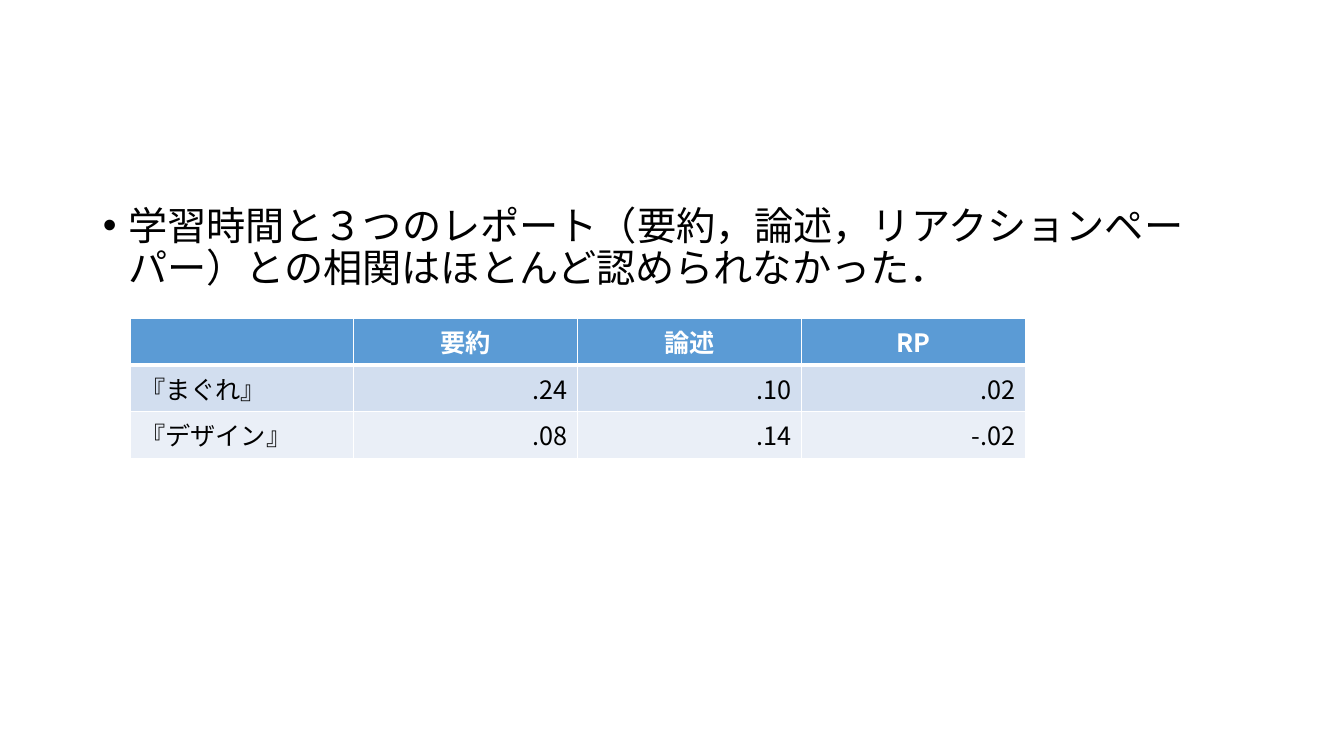
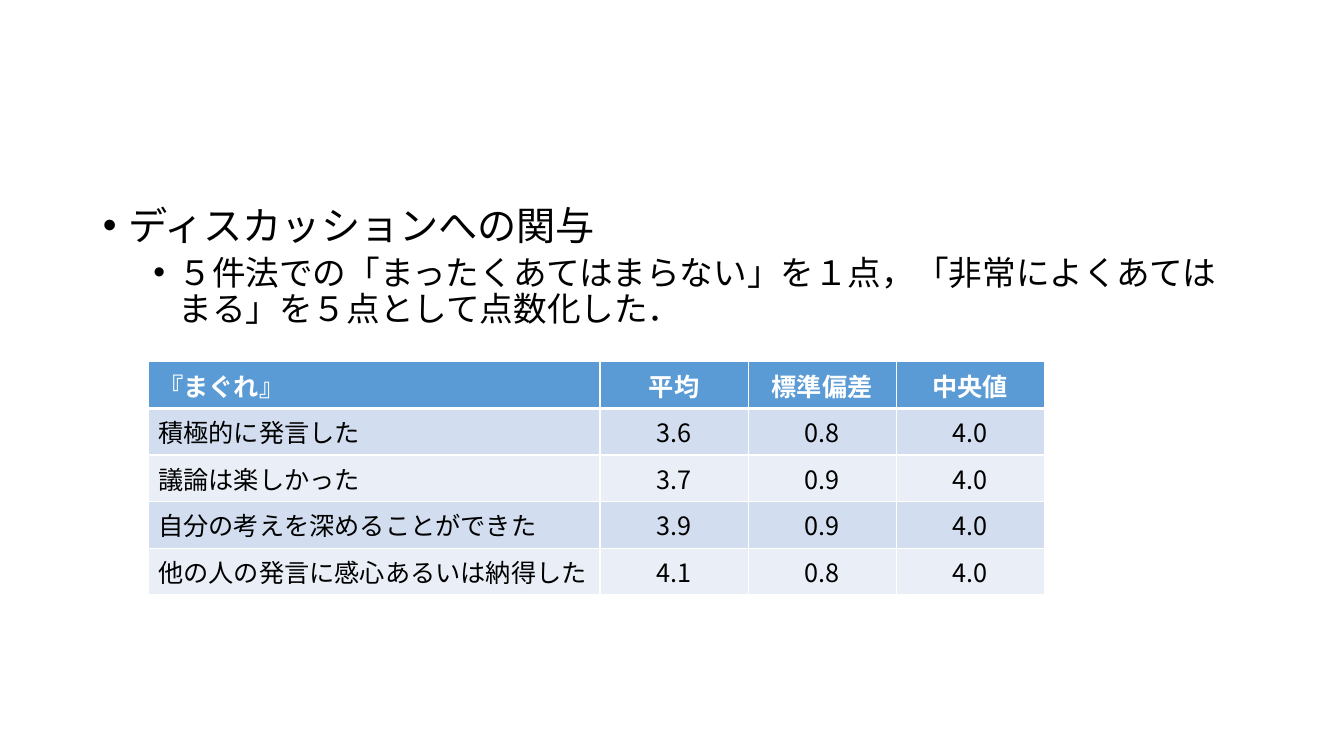
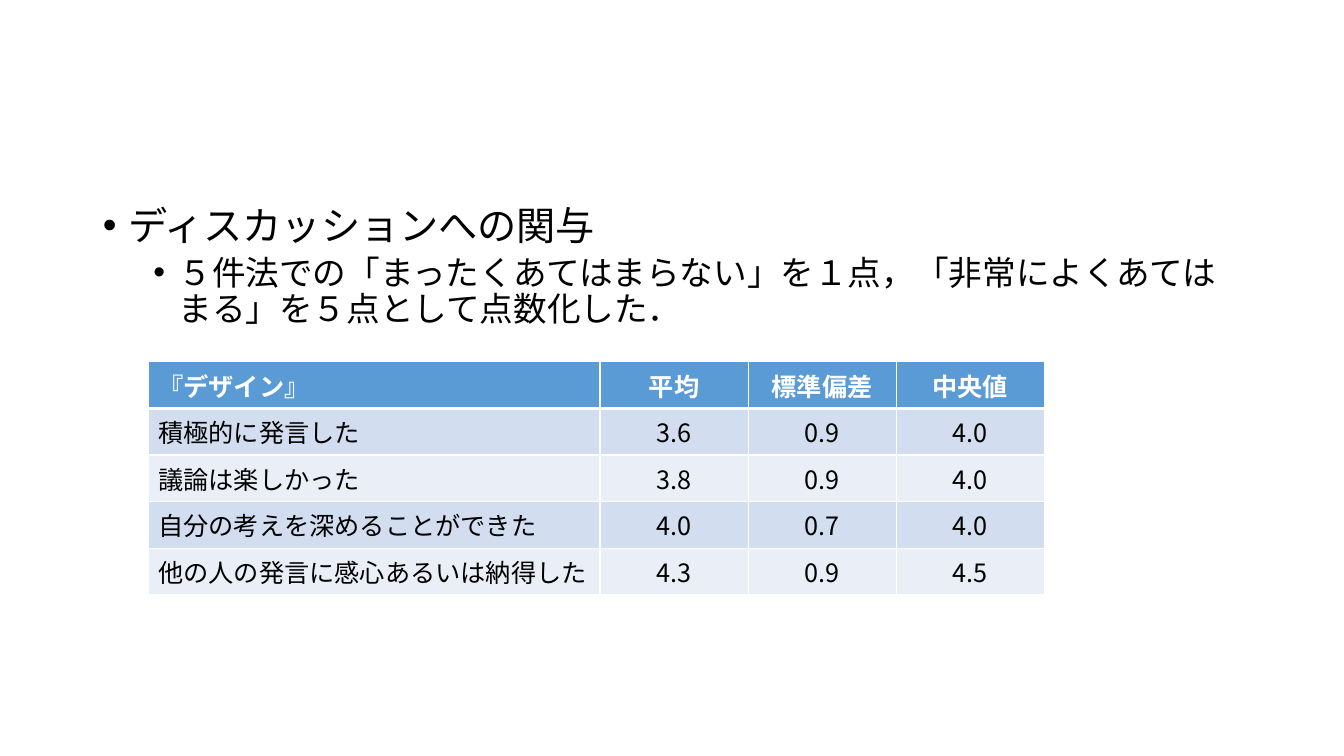
from dataclasses import dataclass

from lxml import etree
from pptx import Presentation
from pptx.dml.color import RGBColor
from pptx.enum.lang import MSO_LANGUAGE_ID
from pptx.enum.text import MSO_AUTO_SIZE, PP_ALIGN
from pptx.oxml.ns import qn
from pptx.util import Pt

LEFT, CENTER, RIGHT = PP_ALIGN.LEFT, PP_ALIGN.CENTER, PP_ALIGN.RIGHT
JAPANESE = MSO_LANGUAGE_ID.JAPANESE
NO_AUTOFIT = MSO_AUTO_SIZE.NONE
TITLE_AND_CONTENT = 1
EMU_PER_PX = 9144


@dataclass(frozen=True)
class Theme:
    font: str = "Noto Sans CJK JP"
    ink: str = "000000"
    paper: str = "FFFFFF"
    header: str = "5B9BD5"
    bands: tuple = ("D2DEEF", "EAEFF7")
    bullet_sizes: tuple = (28, 24)
    bullet_gaps: tuple = (10, 5)
    bullet_indents: tuple = (25, 75)
    hanging: int = 25
    table_size: int = 18
    rule: int = 1
    header_rule: int = 3


THEME = Theme()
SLIDE_SIZE = (1333, 750)
BODY_BOX = (92, 200, 1150, 476)
ROW_HEIGHT = 41

INVOLVEMENT = [
    ("ディスカッションへの関与", 0),
    ("５件法での「まったくあてはまらない」を１点，「非常によくあてはまる」を５点として点数化した．", 1),
]
QUESTIONS = ["積極的に発言した", "議論は楽しかった", "自分の考えを深めることができた",
             "他の人の発言に感心あるいは納得した"]
STATISTICS = ["平均", "標準偏差", "中央値"]


def px(length):
    return length * EMU_PER_PX


def write(paragraph, text, *, size, color=THEME.ink, bold=False, align=LEFT):
    paragraph.alignment = align
    if not text:
        return
    run = paragraph.add_run()
    run.text = text
    font = run.font
    font.size, font.bold, font.name = Pt(size), bold, THEME.font
    font.color.rgb = RGBColor.from_string(color)
    font.language_id = JAPANESE
    etree.SubElement(font._element, qn("a:ea"), typeface=THEME.font)


def add_bullet(paragraph, text, level):
    write(paragraph, text, size=THEME.bullet_sizes[level])
    paragraph.level = level
    paragraph.line_spacing = 0.9
    paragraph.space_before = Pt(THEME.bullet_gaps[level])
    properties = paragraph._p.get_or_add_pPr()
    properties.set("marL", str(px(THEME.bullet_indents[level])))
    properties.set("indent", str(-px(THEME.hanging)))
    etree.SubElement(properties, qn("a:buFont"), typeface="Arial")
    etree.SubElement(properties, qn("a:buChar"), char="•")


def fill_body(body, box, bullets):
    body.left, body.top, body.width, body.height = map(px, box)
    frame = body.text_frame
    frame.word_wrap, frame.auto_size = True, NO_AUTOFIT
    for index, (text, level) in enumerate(bullets):
        paragraph = frame.add_paragraph() if index else frame.paragraphs[0]
        add_bullet(paragraph, text, level)


def set_borders(cell, top, bottom):
    """Draw the four edges; they must precede the fill in the cell properties."""
    properties = cell._tc.get_or_add_tcPr()
    edges = {"lnL": THEME.rule, "lnR": THEME.rule, "lnT": top, "lnB": bottom}
    for position, (edge, width) in enumerate(edges.items()):
        line = etree.Element(qn(f"a:{edge}"), w=str(Pt(width)))
        solid = etree.SubElement(line, qn("a:solidFill"))
        etree.SubElement(solid, qn("a:srgbClr"), val=THEME.paper)
        properties.insert(position, line)


def format_cell(cell, text, row, column, number_align):
    is_header = row == 0
    label_align = CENTER if is_header else number_align
    write(cell.text_frame.paragraphs[0], text, size=THEME.table_size, bold=is_header,
          color=THEME.paper if is_header else THEME.ink,
          align=label_align if column else LEFT)
    cell.fill.solid()
    background = THEME.header if is_header else THEME.bands[(row - 1) % 2]
    cell.fill.fore_color.rgb = RGBColor.from_string(background)
    set_borders(cell, top=THEME.header_rule if row == 1 else THEME.rule,
                bottom=THEME.header_rule if is_header else THEME.rule)


def add_data_table(slide, left, top, widths, rows, number_align):
    box = (left, top, sum(widths), ROW_HEIGHT * len(rows))
    table = slide.shapes.add_table(len(rows), len(widths), *map(px, box)).table
    for column, width in zip(table.columns, widths):
        column.width = px(width)
    for r, texts in enumerate(rows):
        table.rows[r].height = px(ROW_HEIGHT)
        for c, text in enumerate(texts):
            format_cell(table.cell(r, c), text, r, c, number_align)


def add_content_slide(deck, bullets):
    slide = deck.slides.add_slide(deck.slide_layouts[TITLE_AND_CONTENT])
    title = slide.shapes.title._element
    title.getparent().remove(title)
    fill_body(slide.placeholders[1], BODY_BOX, bullets)
    return slide


def add_correlation_slide(deck):
    slide = add_content_slide(deck, [
        ("学習時間と３つのレポート（要約，論述，リアクションペーパー）との相関はほとんど認められなかった．", 0)])
    rows = [["", "要約", "論述", "RP"],
            ["『まぐれ』", ".24", ".10", ".02"],
            ["『デザイン』", ".08", ".14", "-.02"]]
    add_data_table(slide, 129, 316, [222] * 4, rows, RIGHT)


def add_involvement_slide(deck, book, scores):
    slide = add_content_slide(deck, INVOLVEMENT)
    rows = [[book, *STATISTICS]]
    rows += [[question, *values] for question, values in zip(QUESTIONS, scores)]
    add_data_table(slide, 147, 359, [448] + [147] * 3, rows, CENTER)


def main():
    deck = Presentation()
    deck.slide_width, deck.slide_height = map(px, SLIDE_SIZE)
    add_correlation_slide(deck)
    add_involvement_slide(deck, "『まぐれ』", [
        ("3.6", "0.8", "4.0"), ("3.7", "0.9", "4.0"),
        ("3.9", "0.9", "4.0"), ("4.1", "0.8", "4.0")])
    add_involvement_slide(deck, "『デザイン』", [
        ("3.6", "0.9", "4.0"), ("3.8", "0.9", "4.0"),
        ("4.0", "0.7", "4.0"), ("4.3", "0.9", "4.5")])
    deck.save("out.pptx")


if __name__ == "__main__":
    main()
